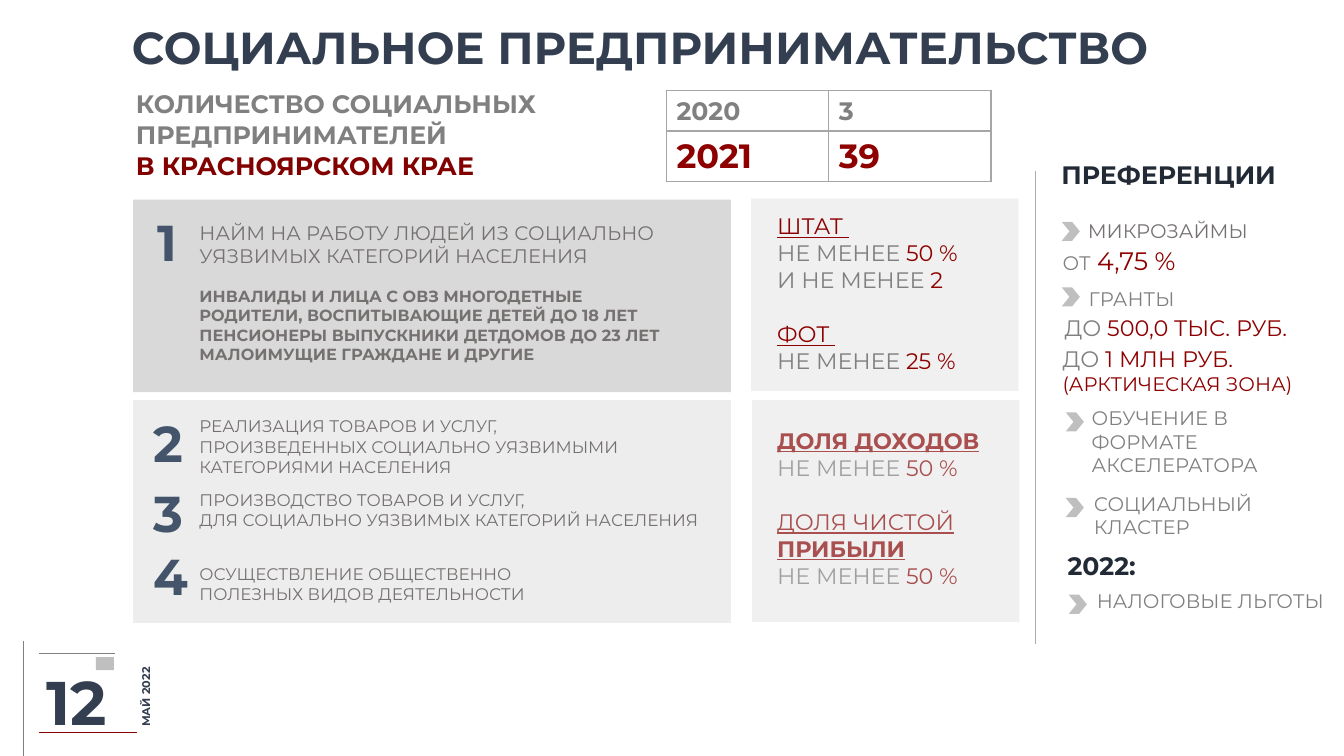
from lxml import etree
from pptx import Presentation
from pptx.dml.color import RGBColor
from pptx.enum.shapes import MSO_CONNECTOR, MSO_SHAPE
from pptx.enum.text import MSO_ANCHOR, PP_ALIGN
from pptx.oxml.ns import qn
from pptx.util import Inches, Pt

RECT, CHEVRON = MSO_SHAPE.RECTANGLE, MSO_SHAPE.CHEVRON
LINE = MSO_CONNECTOR.STRAIGHT
TOP, MIDDLE = MSO_ANCHOR.TOP, MSO_ANCHOR.MIDDLE
LEFT = PP_ALIGN.LEFT
FONT = "Montserrat"
NAVY = RGBColor(0x33, 0x3F, 0x50)
SLATE = RGBColor(0x44, 0x54, 0x6A)
INK = RGBColor(0x22, 0x2A, 0x35)
TAUPE = RGBColor(0x76, 0x71, 0x71)
GRAY = RGBColor(0x80, 0x80, 0x80)
EDGE = RGBColor(0xA6, 0xA6, 0xA6)
RULE = RGBColor(0xAF, 0xAB, 0xAB)
MARK = RGBColor(0xBF, 0xBF, 0xBF)
PANEL = RGBColor(0xD9, 0xD9, 0xD9)
PALE = RGBColor(0xED, 0xED, 0xED)
RED = RGBColor(0x8E, 0x00, 0x00)
WINE = RGBColor(0x82, 0x00, 0x00)


def outline(parent, color, width):
    """Fill a line element with a colour and a width in points."""
    parent.set("w", str(Pt(width)))
    fill = etree.SubElement(parent, qn("a:solidFill"))
    etree.SubElement(fill, qn("a:srgbClr")).set("val", str(color))


def write(frame, lines, size=14, color=GRAY, bold=False, line=None, gaps=()):
    """Write lines of text, each a string or a list of (text, format) runs."""
    for i, runs in enumerate(lines):
        para = frame.paragraphs[0] if i == 0 else frame.add_paragraph()
        para.alignment = LEFT
        if line:
            para.line_spacing = Pt(line)
        if i in gaps:
            para.space_before = Pt(19.5)
        for words, look in [(runs, {})] if isinstance(runs, str) else runs:
            run = para.add_run()
            run.text = words
            run.font.name = FONT
            run.font.size = Pt(look.get("size", size))
            run.font.bold = look.get("bold", bold)
            run.font.underline = look.get("under", False)
            run.font.color.rgb = look.get("color", color)


def text(shapes, box, *lines, anchor=TOP, wrap=True, **look):
    """Add a text box with formatted lines."""
    item = shapes.add_textbox(*map(Inches, box))
    frame = item.text_frame
    frame.word_wrap = wrap
    frame.vertical_anchor = anchor
    write(frame, lines, **look)
    return item


def block(shapes, box, color, kind=RECT, alpha=None):
    """Add a filled shape without line or shadow."""
    item = shapes.add_shape(kind, *map(Inches, box))
    item.shadow.inherit = False
    item.line.fill.background()
    item.fill.solid()
    item.fill.fore_color.rgb = color
    if alpha:
        tone = item.fill._xPr.find(".//" + qn("a:srgbClr"))
        etree.SubElement(tone, qn("a:alpha")).set("val", str(alpha * 1000))
    return item


def stroke(shapes, start, end, color):
    """Add a thin straight line."""
    item = shapes.add_connector(LINE, *map(Inches, start + end))
    item.line.color.rgb = color
    item.line.width = Pt(0.5)
    etree.SubElement(item._element.spPr, qn("a:effectLst"))


def header(shapes, x, y):
    """Place the title and the lead lines."""
    title = text(shapes, (x, y, 12.12, 0.72), "СОЦИАЛЬНОЕ ПРЕДПРИНИМАТЕЛЬСТВО",
                 anchor=MIDDLE, size=32, color=NAVY, bold=True)
    props = title.text_frame.paragraphs[0].runs[0].font._element
    edge = etree.Element(qn("a:ln"))
    props.insert(0, edge)
    outline(edge, NAVY, 0.8)
    text(shapes, (x + 0.04, y + 0.74, 5.56, 0.68), "КОЛИЧЕСТВО СОЦИАЛЬНЫХ ПРЕДПРИНИМАТЕЛЕЙ",
         anchor=MIDDLE, size=18, bold=True)
    text(shapes, (x + 0.04, y + 1.19, 4.36, 0.8), "В КРАСНОЯРСКОМ КРАЕ",
         anchor=MIDDLE, size=18, color=WINE, bold=True, line=14)


def counts(shapes, x, y):
    """Place the table of yearly counts."""
    table = shapes.add_table(2, 2, *map(Inches, (x, y, 3.22, 0.9))).table
    rows = [("2020", "3", 18, GRAY, 0.4), ("2021", "39", 24, RED, 0.5)]
    for r, (year, count, size, color, height) in enumerate(rows):
        table.rows[r].height = Inches(height)
        for c, words in enumerate((year, count)):
            cell = table.cell(r, c)
            write(cell.text_frame, [words], size=size, color=color, bold=True)
            props = cell._tc.get_or_add_tcPr()
            for side in ("lnL", "lnR", "lnT", "lnB"):
                outline(etree.SubElement(props, qn("a:" + side)), EDGE, 1)
            cell.fill.background()


def hiring(shapes, x, y):
    """Place the first criterion."""
    block(shapes, (x, y, 5.93, 1.91), PANEL)
    text(shapes, (x + 0.14, y + 0.16, 0.62, 0.66), "1",
         anchor=MIDDLE, size=36, color=SLATE, bold=True, line=32)
    text(shapes, (x + 0.56, y + 0.16, 5.34, 0.57),
         "НАЙМ НА РАБОТУ ЛЮДЕЙ ИЗ СОЦИАЛЬНО УЯЗВИМЫХ КАТЕГОРИЙ НАСЕЛЕНИЯ", color=TAUPE)
    text(shapes, (x + 0.56, y + 0.89, 5.55, 0.71),
         "ИНВАЛИДЫ И ЛИЦА С ОВЗ МНОГОДЕТНЫЕ",
         "РОДИТЕЛИ, ВОСПИТЫВАЮЩИЕ ДЕТЕЙ ДО 18 ЛЕТ",
         "ПЕНСИОНЕРЫ ВЫПУСКНИКИ ДЕТДОМОВ ДО 23 ЛЕТ",
         "МАЛОИМУЩИЕ ГРАЖДАНЕ И ДРУГИЕ",
         anchor=MIDDLE, size=11.5, color=TAUPE, bold=True)


def goods(shapes, x, y):
    """Place criteria two to four as a group."""
    group = shapes.add_group_shape().shapes
    block(group, (x, y, 5.93, 2.21), PALE)
    items = [
        (0.5, 0.11, 4.72, ["РЕАЛИЗАЦИЯ ТОВАРОВ И УСЛУГ, ПРОИЗВЕДЕННЫХ "
                           "СОЦИАЛЬНО УЯЗВИМЫМИ КАТЕГОРИЯМИ НАСЕЛЕНИЯ"]),
        (1.19, 0.84, 5.28, ["ПРОИЗВОДСТВО ТОВАРОВ И УСЛУГ,",
                            "ДЛЯ СОЦИАЛЬНО УЯЗВИМЫХ КАТЕГОРИЙ НАСЕЛЕНИЯ"]),
        (1.82, 1.57, 4.01, ["ОСУЩЕСТВЛЕНИЕ ОБЩЕСТВЕННО ПОЛЕЗНЫХ ВИДОВ ДЕЯТЕЛЬНОСТИ"]),
    ]
    for num, (mid, top, width, lines) in enumerate(items, 2):
        text(group, (x + 0.1, y + mid - 0.32, 0.59, 0.64), str(num),
             anchor=MIDDLE, size=36, color=SLATE, bold=True, line=32)
        text(group, (x + 0.56, y + top, width, 0.6), *lines, size=12, color=TAUPE)


def shares(shapes, x, y):
    """Place the two panels of thresholds."""
    red, link = {"color": RED}, {"color": RED, "under": True}
    strong = {**link, "bold": True}
    half = [("НЕ МЕНЕЕ ", {}), ("50 %", red)]
    block(shapes, (x, y, 2.65, 1.91), PANEL, alpha=37)
    text(shapes, (x + 0.16, y + 0.09, 2.53, 1.72),
         [("ШТАТ ", link)], half, [("И НЕ МЕНЕЕ ", {}), ("2", red)],
         [("ФОТ ", link)], [("НЕ МЕНЕЕ ", {}), ("25 %", red)], size=16, gaps=(3,))
    text(shapes, (x + 0.16, y + 2.22, 2.64, 1.72),
         [("ДОЛЯ ДОХОДОВ", strong)], half,
         [("ДОЛЯ ЧИСТОЙ ", link), ("ПРИБЫЛИ", strong)], half, size=16, gaps=(2,))
    block(shapes, (x + 0.01, y + 2, 2.65, 2.2), PANEL, alpha=37)


def perks(shapes, x, y):
    """Place the column of preferences beside its rule."""
    red = {"color": RED}
    stroke(shapes, (x, y), (x, y + 4.69), RULE)
    for dx, dy, words in [(0.16, -0.16, "ПРЕФЕРЕНЦИИ"), (0.22, 3.72, "2022:")]:
        text(shapes, (x + dx, y + dy, 2.54, 0.48), words,
             anchor=MIDDLE, size=18, color=INK, bold=True, line=14)
    items = [
        (0.26, 0.5, 0.42, 0.42, 1.91, "МИКРОЗАЙМЫ", TAUPE),
        (0.26, 1.15, 0.43, 1.1, 2.06, "ГРАНТЫ", GRAY),
        (0.3, 2.39, 0.46, 2.28, 2.06, "ОБУЧЕНИЕ В ФОРМАТЕ АКСЕЛЕРАТОРА", GRAY),
        (0.3, 3.24, 0.48, 3.13, 2.03, "СОЦИАЛЬНЫЙ КЛАСТЕР", GRAY),
        (0.33, 4.2, 0.51, 4.09, 2.55, "НАЛОГОВЫЕ ЛЬГОТЫ", GRAY),
    ]
    for mx, my, dx, dy, width, words, color in items:
        mark = block(shapes, (x + mx, y + my, 0.18, 0.19), MARK, CHEVRON)
        mark.adjustments[0] = 0.43
        text(shapes, (x + dx, y + dy, width, 0.34), words, color=color)
    text(shapes, (x + 0.17, y + 0.68, 1.52, 0.4),
         [("ОТ", {}), (" 4,75 %", {"size": 18, **red})], wrap=False)
    text(shapes, (x + 0.19, y + 1.37, 2.78, 0.37),
         [("ДО ", {}), ("500,0 ТЫС. РУБ.", red)], size=16)
    text(shapes, (x + 0.17, y + 1.67, 2.78, 0.61),
         [("ДО ", {}), ("1 МЛН РУБ. ", red), ("(АРКТИЧЕСКАЯ ЗОНА)", {"size": 14, **red})],
         size=16)


def footer(shapes, x, y):
    """Place the page number and the date as a group."""
    group = shapes.add_group_shape().shapes
    block(group, (x + 0.72, y + 0.16, 0.18, 0.13), MARK)
    stroke(group, (x, y), (x, y + 1.14), GRAY)
    stroke(group, (x + 0.91, y + 0.12), (x + 0.16, y + 0.12), GRAY)
    stroke(group, (x + 1.13, y + 0.91), (x + 0.16, y + 0.91), WINE)
    date = text(group, (x + 0.8, y, 0.83, 1.07), "МАЙ 2022",
                anchor=MIDDLE, size=8, color=NAVY, bold=True)
    date.rotation = 270
    text(group, (x + 0.13, y + 0.29, 1.33, 0.61), "12",
         anchor=MIDDLE, size=44, color=NAVY, bold=True)


def main():
    """Build the slide and save it."""
    deck = Presentation()
    deck.slide_width, deck.slide_height = Inches(13.33), Inches(7.5)
    shapes = deck.slides.add_slide(deck.slide_layouts[6]).shapes
    header(shapes, 1.21, 0.1)
    hiring(shapes, 1.32, 1.98)
    goods(shapes, 1.32, 3.97)
    shares(shapes, 7.45, 1.97)
    perks(shapes, 10.27, 1.7)
    counts(shapes, 6.61, 0.9)
    footer(shapes, 0.23, 6.36)
    deck.save("out.pptx")


if __name__ == "__main__":
    main()
